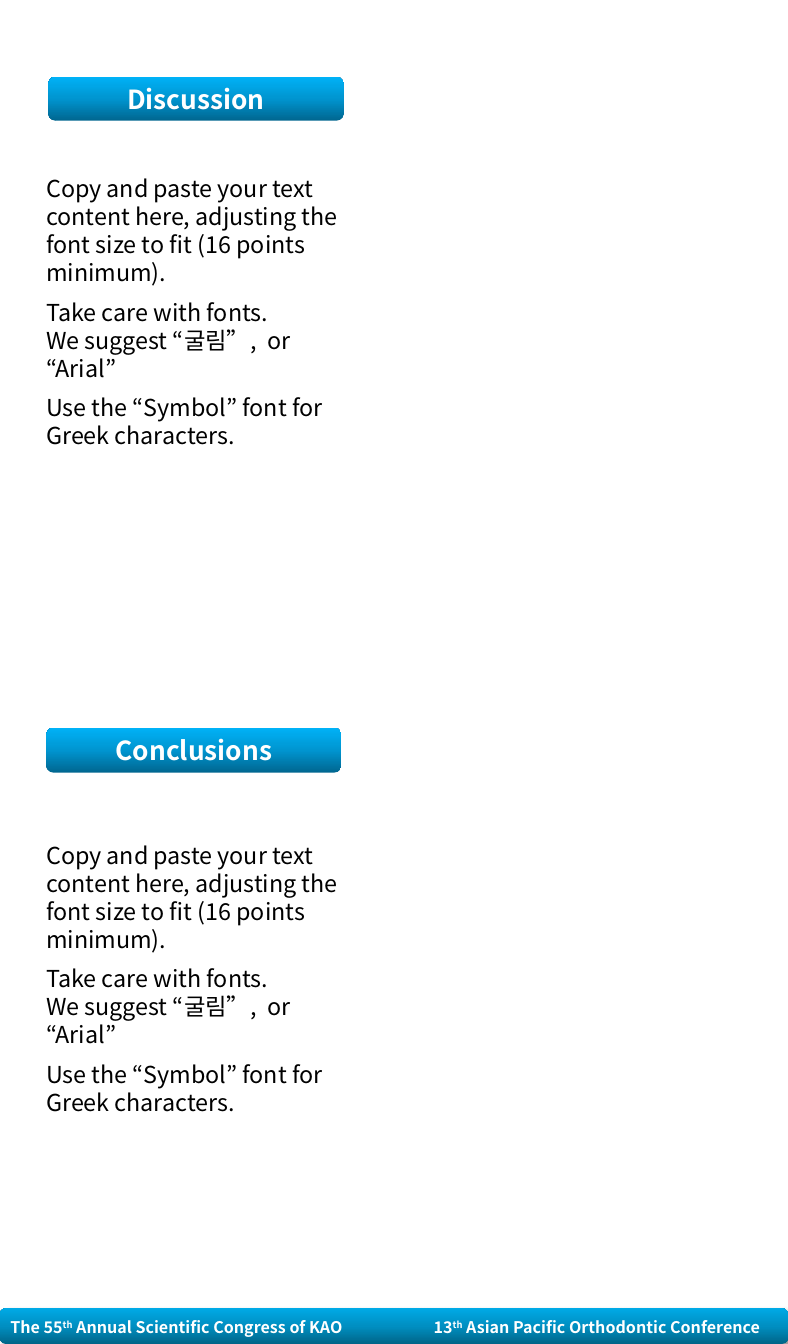
from lxml.etree import SubElement
from copy import deepcopy
from pptx import Presentation
from pptx.dml.color import RGBColor
from pptx.enum.shapes import MSO_SHAPE as SHAPE
from pptx.enum.text import MSO_ANCHOR as ANCHOR, PP_ALIGN as ALIGN
from pptx.oxml import parse_xml
from pptx.oxml.ns import nsdecls, qn
from pptx.util import Inches, Pt

FONT = "Noto Sans CJK KR"
COLORS = {"text": "000000", "light": "FFFFFF"}
BAR_STOPS = ["006588", "008FC2", "00AAE6"]
HEADING_STOPS = ["006690", "0095D0", "00B2F7"]
BODY = [
    "Copy and paste your text content here, adjusting the font size to fit (16 points minimum).",
    "Take care with fonts. \vWe suggest “굴림”,  or “Arial”",
    "Use the “Symbol” font for Greek characters.",
]
SECTIONS = [
    ("Discussion", 0.46, 0.73, 0.42, 1.62),
    ("Conclusions", 0.44, 6.93, 0.43, 7.97),
]
FOOTER = [("The 55", False), ("th", True),
          (" Annual Scientific Congress of KAO\t13", False), ("th", True),
          (" Asian Pacific Orthodontic Conference", False)]


def add_bar(left, top, width, height, stops):
    sp = s.shapes.add_shape(SHAPE.ROUNDED_RECTANGLE, Inches(left), Inches(top),
                            Inches(width), Inches(height))
    sp.shadow.inherit = False
    sp.line.fill.background()
    sp.fill.gradient()
    sp.fill.gradient_angle = 90
    gs_list = sp._element.spPr.find(qn("a:gradFill")).find(qn("a:gsLst"))
    gs_list.append(deepcopy(gs_list[0]))
    for stop, position, color in zip(sp.fill.gradient_stops, (0, 0.5, 1), stops):
        stop.position = position
        stop.color.rgb = RGBColor.from_string(color)
    return sp


def set_font(p, size, color, bold=False):
    p.font.size = Pt(size)
    p.font.bold = bold
    p.font.name = FONT
    p.font.color.rgb = RGBColor.from_string(COLORS[color])
    SubElement(p.font._element, qn("a:ea"), typeface=FONT)


prs = Presentation()
prs.slide_width = Inches(7.5)
prs.slide_height = Inches(12.8)
s = prs.slides.add_slide(prs.slide_layouts[6])

bar = add_bar(0, 12.46, 7.5, 0.34, BAR_STOPS)
bar._element.spPr.find(qn("a:effectLst")).append(parse_xml(
    f'<a:outerShdw {nsdecls("a")} blurRad="{Pt(4)}" dist="{Pt(3)}" dir="2700000">'
    '<a:srgbClr val="000000"><a:alpha val="40000"/></a:srgbClr></a:outerShdw>'))

for title, left, top, height, body_top in SECTIONS:
    heading = add_bar(left, top, 2.81, height, HEADING_STOPS)
    body = s.shapes.add_textbox(Inches(0.36), Inches(body_top), Inches(2.99), Inches(2.76))
    for tf in (heading.text_frame, body.text_frame):
        tf.word_wrap = True
        tf.margin_left = tf.margin_right = Inches(0.08)
        tf.margin_top = tf.margin_bottom = Inches(0.04)

    tf = heading.text_frame
    tf.vertical_anchor = ANCHOR.MIDDLE
    p = tf.paragraphs[0]
    p.text = title
    p.alignment = ALIGN.CENTER
    set_font(p, 18, "light", True)

    tf = body.text_frame
    for i, text in enumerate(BODY):
        p = tf.add_paragraph() if i else tf.paragraphs[0]
        p.text = text
        p.space_before = Pt(8 if i else 0)
        set_font(p, 16, "text")

footer = s.shapes.add_textbox(0, Inches(12.5), Inches(7.5), Inches(0.29))
tf = footer.text_frame
tf.word_wrap = True
p = tf.paragraphs[0]
set_font(p, 11, "light", True)
p._p.get_or_add_pPr().insert(0, parse_xml(
    f'<a:tabLst {nsdecls("a")}><a:tab pos="{Inches(4.03)}" algn="l"/></a:tabLst>'))
for text, raised in FOOTER:
    r = p.add_run()
    r.text = text
    if raised:
        r.font._element.set("baseline", "30000")

prs.save("out.pptx")
